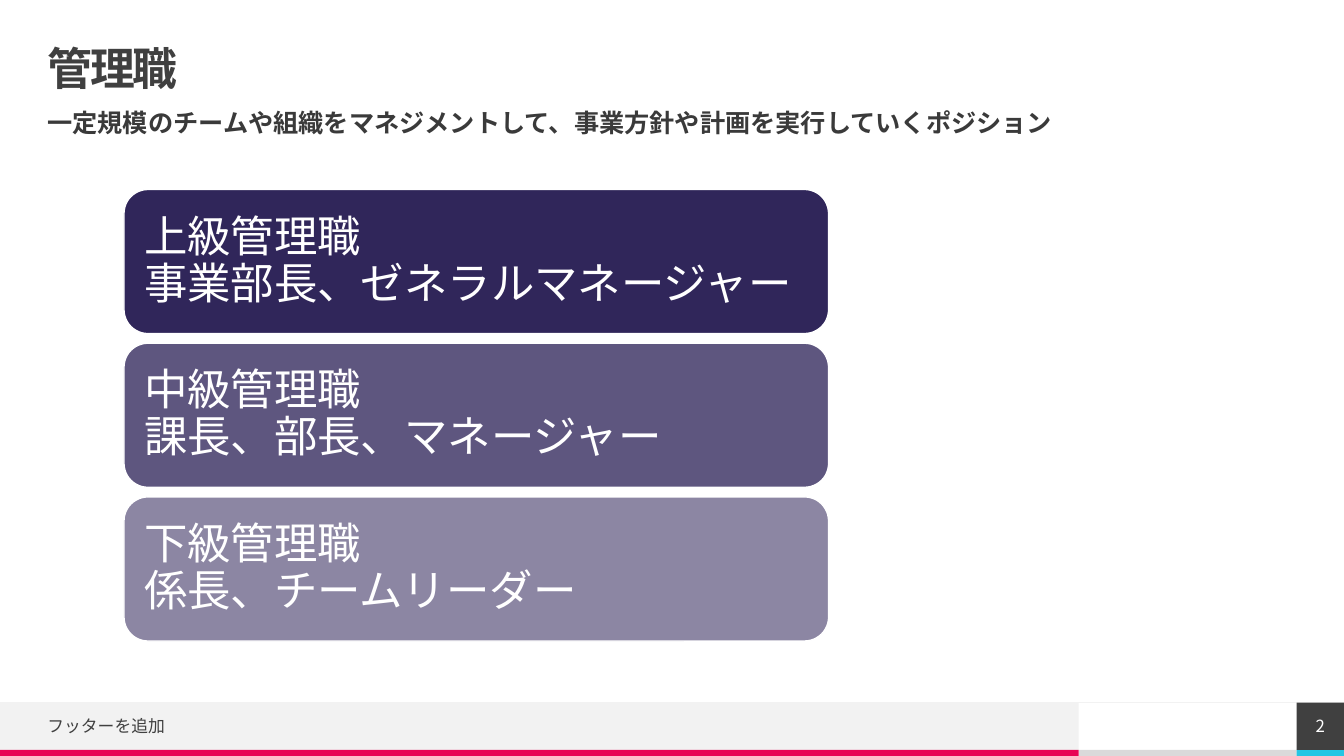
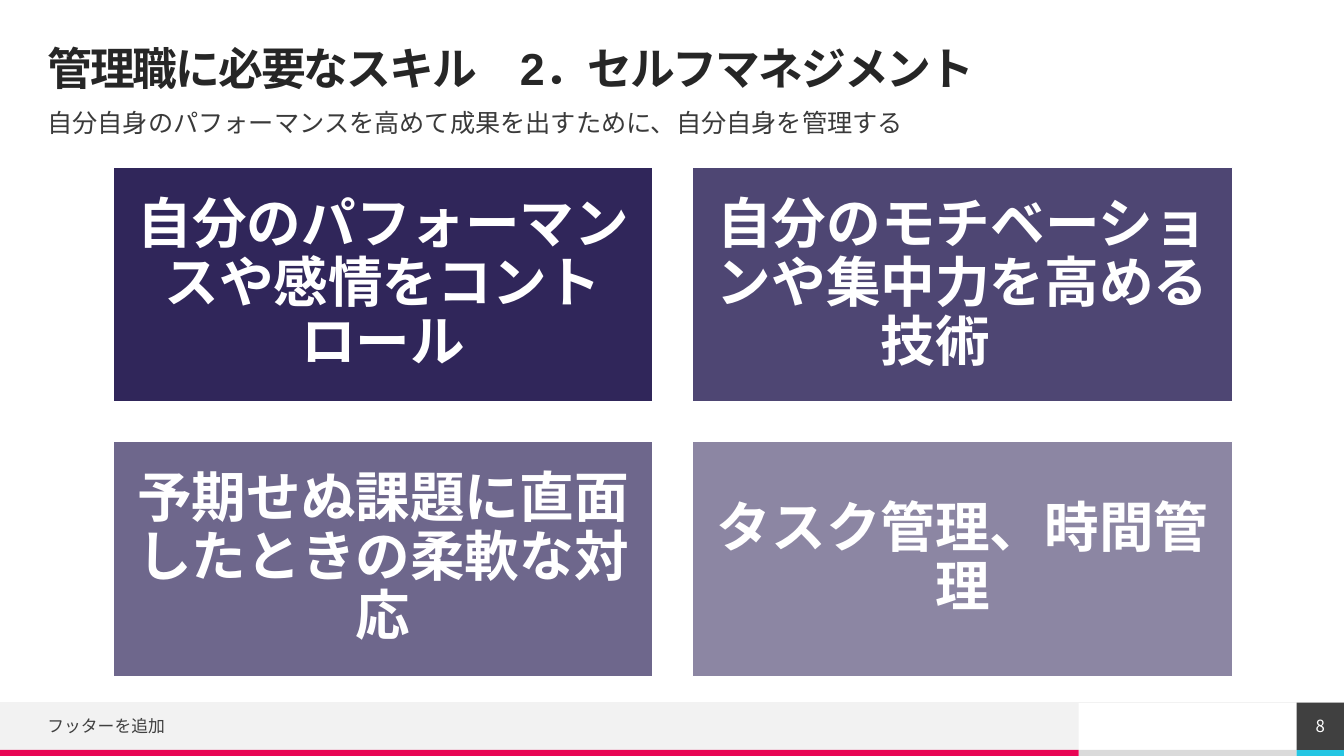
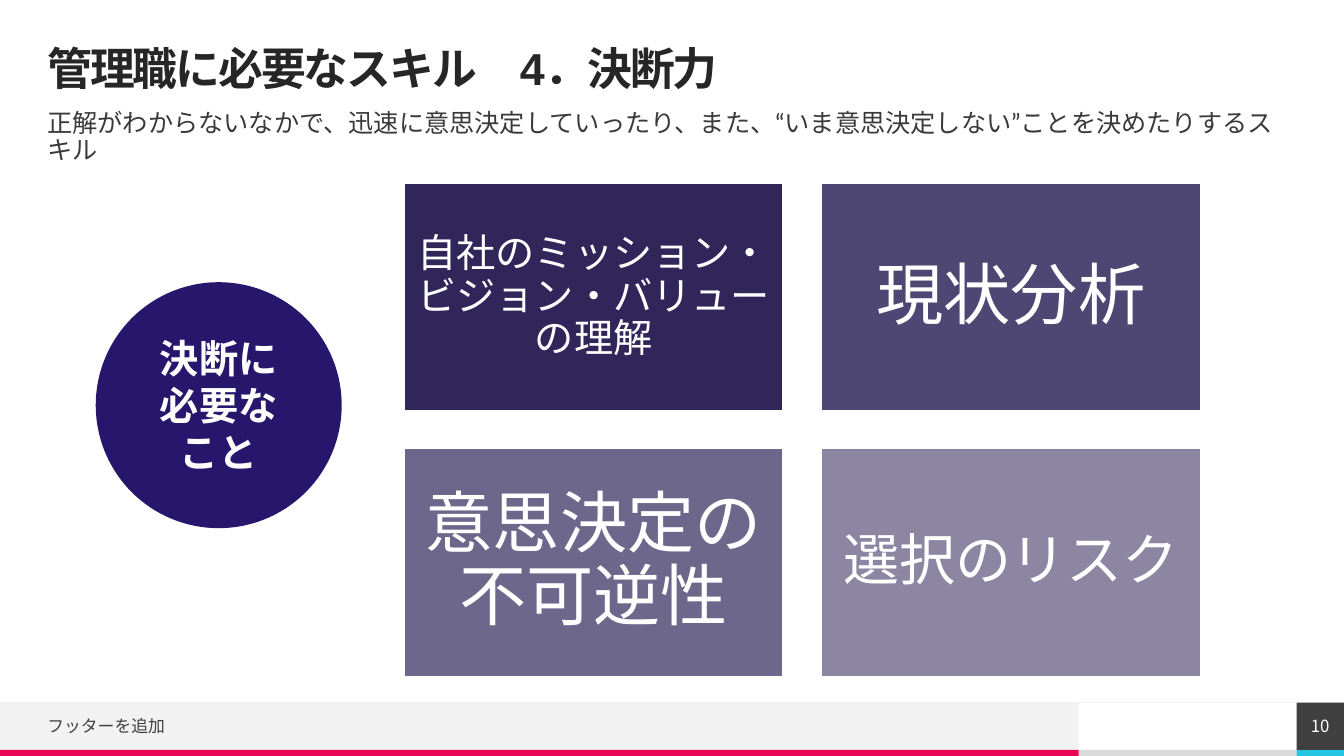
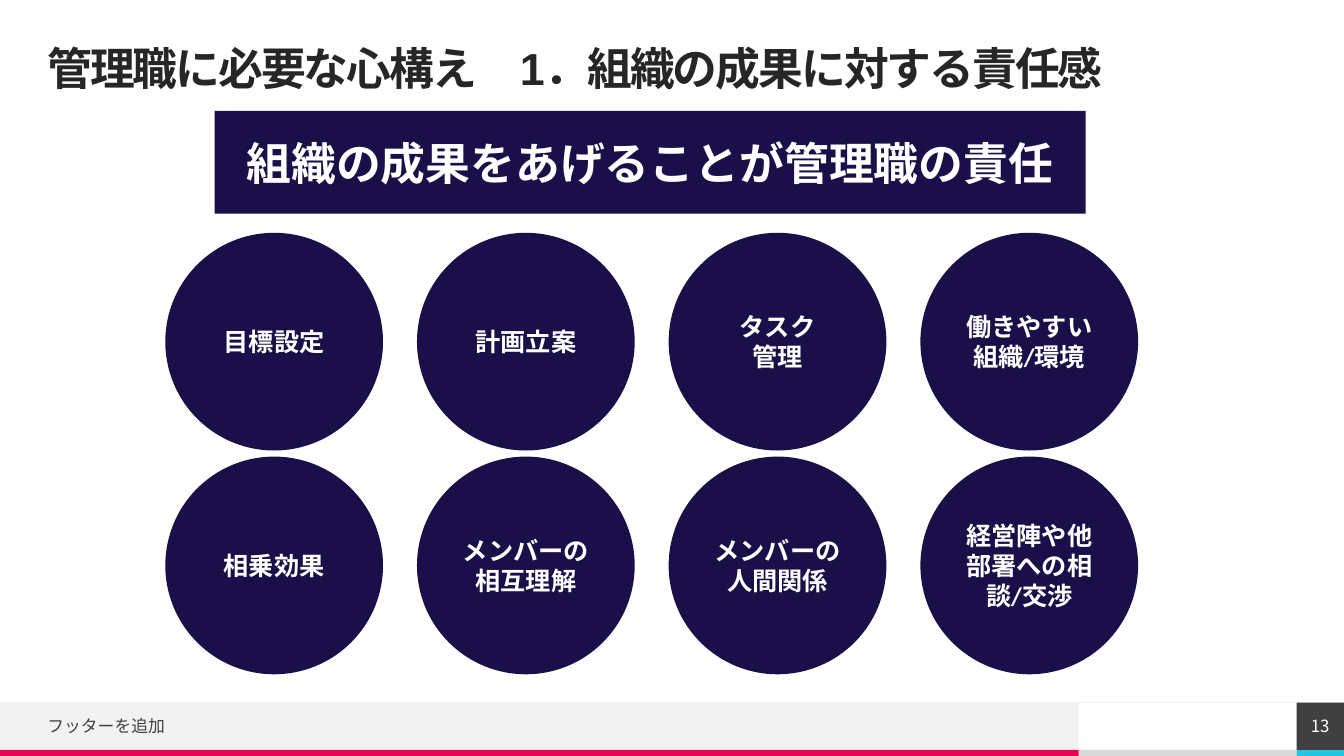
from lxml import etree
from pptx import Presentation
from pptx.dml.color import RGBColor
from pptx.enum.lang import MSO_LANGUAGE_ID
from pptx.enum.shapes import MSO_CONNECTOR, MSO_SHAPE
from pptx.enum.text import MSO_ANCHOR, PP_ALIGN
from pptx.oxml.ns import qn
from pptx.util import Inches, Pt

RECT, ROUND, OVAL = MSO_SHAPE.RECTANGLE, MSO_SHAPE.ROUNDED_RECTANGLE, MSO_SHAPE.OVAL
STRAIGHT = MSO_CONNECTOR.STRAIGHT
LEFT, CENTER = PP_ALIGN.LEFT, PP_ALIGN.CENTER
TOP, MIDDLE = MSO_ANCHOR.TOP, MSO_ANCHOR.MIDDLE
JAPANESE = MSO_LANGUAGE_ID.JAPANESE

NAVY = RGBColor(0x1A, 0x0F, 0x49)
INDIGO = RGBColor(0x26, 0x16, 0x6C)
WHITE = RGBColor(0xFF, 0xFF, 0xFF)
BLACK = RGBColor(0x26, 0x26, 0x26)
SLATE = RGBColor(0x3A, 0x3A, 0x3A)
GRAY = RGBColor(0x40, 0x40, 0x40)
SILVER = RGBColor(0xDA, 0xDA, 0xDA)
PALE = RGBColor(0xF2, 0xF2, 0xF2)
PINK = RGBColor(0xE8, 0x05, 0x54)
CYAN = RGBColor(0x25, 0xC6, 0xE3)

HEAD, BODY, BANNER, GOTHIC = "Arial", "Calibri", "Lato", "Noto Sans CJK JP"
ASIAN = "Lato"

# The grid has square cells of a tenth of an inch.
COLS, ROWS = 133.33, 75
MARGIN = 4.7
BAND, STRIPE = 69.7, 74.4
SPLIT, CORNER = 107, 128.63


def cells(*counts):
    return [Inches(count / 10) for count in counts]


class Deck:
    def __init__(self):
        self.prs = Presentation()
        self.prs.slide_width, self.prs.slide_height = cells(COLS, ROWS)
        self.slide = None

    def page(self, number, title, lead=None, color=BLACK, bold=False):
        """Start a slide with its title, optional lead line and footer."""
        self.slide = self.prs.slides.add_slide(self.prs.slide_layouts[6])
        self.foot(number)
        self.label((MARGIN, 4.7, 123.9, 4.7), title, 32, HEAD, color,
                   bold=True, lines=0.9, track=-1.5)
        if lead:
            self.label((MARGIN, 11, 124, 3.9), lead, 18, HEAD, SLATE,
                       bold=bold, lines=0.9, anchor=TOP)

    def foot(self, number):
        thin = ROWS - STRIPE
        self.shape(RECT, (SPLIT, STRIPE, CORNER - SPLIT, thin), SILVER)
        self.shape(RECT, (0, BAND, SPLIT, STRIPE - BAND), PALE)
        self.shape(RECT, (0, STRIPE, SPLIT, thin), PINK)
        self.shape(RECT, (CORNER, STRIPE, COLS - CORNER, thin), CYAN)
        self.rule(BAND, PALE)
        self.label((MARGIN, 70.4, 61.9, 3.2), "フッターを追加", 12, GOTHIC, GRAY)
        box = self.shape(RECT, (CORNER, BAND, COLS - CORNER, STRIPE - BAND), GRAY)
        self.letter(box, str(number), 12, GOTHIC, pad=0)

    def rule(self, row, color):
        line = self.slide.shapes.add_connector(STRAIGHT, *cells(COLS, row, 0, row))
        line.line.color.rgb = color
        line.line.width = Pt(0.5)
        etree.SubElement(line._element.spPr, qn("a:effectLst"))

    def shape(self, kind, box, fill, alpha=None):
        """Add a plain shape; one with an alpha in percent has a white edge."""
        shape = self.slide.shapes.add_shape(kind, *cells(*box))
        shape.shadow.inherit = False
        shape.fill.solid()
        shape.fill.fore_color.rgb = fill
        if alpha is None:
            shape.line.fill.background()
        else:
            tint = shape._element.spPr.find(qn("a:solidFill"))[0]
            etree.SubElement(tint, qn("a:alpha"), val=str(alpha * 1000))
            shape.line.color.rgb = WHITE
            shape.line.width = Pt(1)
        return shape

    def label(self, box, text, size, font, color, **style):
        area = self.slide.shapes.add_textbox(*cells(*box))
        self.letter(area, text, size, font, color, align=LEFT, pad=0, **style)

    def letter(self, shape, text, size, font, color=WHITE, bold=False,
               align=CENTER, anchor=MIDDLE, pad=None, lines=None, track=None):
        """Fill a shape with text in one style; pad and track are in points."""
        frame = shape.text_frame
        frame.text = text
        frame.word_wrap = True
        frame.vertical_anchor = anchor
        if pad is not None:
            frame.margin_left = frame.margin_right = Pt(pad)
            frame.margin_top = frame.margin_bottom = Pt(pad)
        for para in frame.paragraphs:
            para.alignment = align
            if lines:
                para.line_spacing = lines
            for run in para.runs:
                face = run.font
                face.name, face.size, face.bold = font, Pt(size), bold
                face.color.rgb = color
                face.language_id = JAPANESE
                props = run._r.get_or_add_rPr()
                etree.SubElement(props, qn("a:ea"), typeface=ASIAN)
                if track:
                    props.set("spc", str(int(track * 100)))

    def tile(self, kind, box, alpha, text, size, font, **style):
        shape = self.shape(kind, box, NAVY, alpha)
        self.letter(shape, text, size, font, pad=size * 0.3, lines=0.9, **style)

    def disc(self, box, fill, text, size):
        self.letter(self.shape(OVAL, box, fill), text, size, BODY, bold=True)


def spots(count, wide, start, step, size):
    """Yield the boxes of a grid that is wide columns across, row by row."""
    for spot in range(count):
        row, col = divmod(spot, wide)
        yield (start[0] + col * step[0], start[1] + row * step[1], *size)


def ranks(deck):
    deck.page(2, "管理職",
              "一定規模のチームや組織をマネジメントして、事業方針や計画を実行していくポジション",
              color=GRAY, bold=True)
    texts = ["上級管理職　\v事業部長、ゼネラルマネージャー",
             "中級管理職\v課長、部長、マネージャー",
             "下級管理職\v係長、チームリーダー"]
    boxes = spots(3, 1, (12.3, 18.8), (0, 15.25), (69.9, 14.3))
    for box, alpha, text in zip(boxes, (90, 70, 50), texts):
        deck.tile(ROUND, box, alpha, text, 31, BODY, align=LEFT)


def tiles(deck, items, start, step, size, font, bold=False):
    boxes = spots(4, 2, start, step, size)
    for box, alpha, (text, points) in zip(boxes, (90, 77, 63, 50), items):
        deck.tile(RECT, box, alpha, text, points, font, bold=bold)


def control(deck):
    deck.page(8, "管理職に必要なスキル　2．セルフマネジメント",
              "自分自身のパフォーマンスを高めて成果を出すために、自分自身を管理する")
    texts = ["自分のパフォーマンスや感情をコントロール",
             "自分のモチベーションや集中力を高める技術　",
             "予期せぬ課題に直面したときの柔軟な対応",
             "タスク管理、時間管理"]
    tiles(deck, [(text, 39) for text in texts],
          (11.2, 16.6), (57.5, 27.2), (53.6, 23.3), GOTHIC, bold=True)


def choice(deck):
    deck.page(10, "管理職に必要なスキル　4．決断力",
              "正解がわからないなかで、迅速に意思決定していったり、また、"
              "“いま意思決定しない”ことを決めたりするスキル")
    items = [("自社のミッション・ビジョン・バリューの理解", 28), ("現状分析", 48),
             ("意思決定の不可逆性", 48), ("選択のリスク", 40)]
    tiles(deck, items, (40.1, 18.2), (41.4, 26.3), (37.6, 22.6), BODY)
    deck.disc((9.5, 28, 24.4, 24.4), INDIGO, "決断に必要なこと", 28)


def duty(deck):
    deck.page(13, "管理職に必要な心構え　1．組織の成果に対する責任感")
    box = deck.shape(RECT, (21.3, 11, 86.4, 10.2), NAVY)
    deck.letter(box, "組織の成果をあげることが管理職の責任", 32, BANNER, bold=True)
    texts = ["目標設定", "計画立案", "タスク\v管理", "働きやすい組織/環境",
             "相乗効果", "メンバーの相互理解", "メンバーの人間関係",
             "経営陣や他部署への相談/交渉"]
    boxes = spots(8, 4, (16.4, 23.1), (24.97, 22.2), (21.6, 21.6))
    for box, text in zip(boxes, texts):
        deck.disc(box, NAVY, text, 18)


def main():
    deck = Deck()
    for build in (ranks, control, choice, duty):
        build(deck)
    deck.prs.save("out.pptx")


if __name__ == "__main__":
    main()
